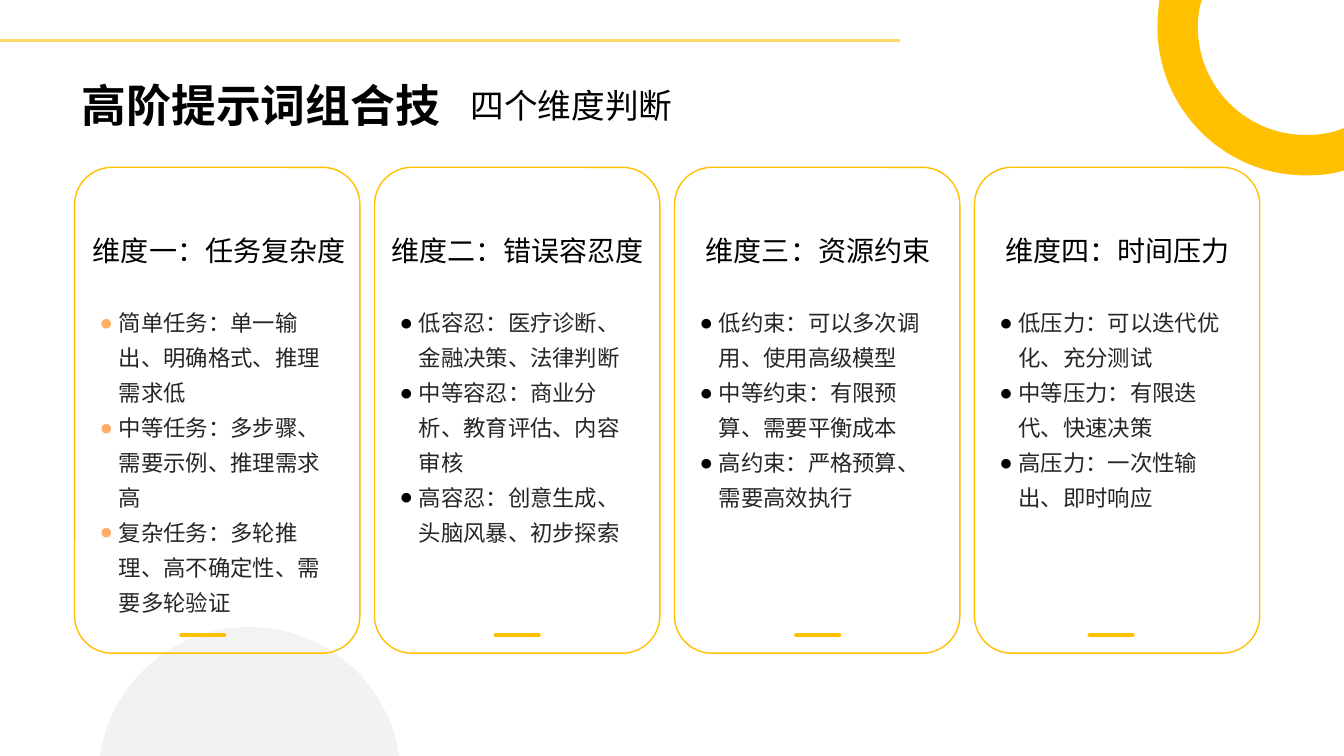
import lxml.etree
import pptx
import pptx.dml.color
import pptx.enum.shapes
import pptx.enum.text
import pptx.oxml
import pptx.oxml.ns
import pptx.util

Inches = pptx.util.Inches
Pt = pptx.util.Pt
qn = pptx.oxml.ns.qn
color = pptx.dml.color.RGBColor.from_string
HEADING_FONT = "Noto Sans CJK SC"

presentation = pptx.Presentation()
presentation.slide_width = Inches(13.33)
presentation.slide_height = Inches(7.5)
slide = presentation.slides.add_slide(presentation.slide_layouts[6])


def style_text(paragraph, size, font_name, hex_color):
    font = paragraph.font
    font.size = Pt(size)
    font.color.rgb = color(hex_color)
    font.name = font_name
    properties = paragraph._p.pPr.find(qn("a:defRPr"))
    lxml.etree.SubElement(properties, qn("a:ea"), typeface=font_name)


ring = [
    [(11.92, 0)],
    [(11.89, 0.09), (11.88, 0.18), (11.88, 0.27)],
    [(11.88, 0.86), (12.36, 1.34), (12.95, 1.34)],
    [(13.09, 1.34), (13.22, 1.32), (13.33, 1.27)],
    [(13.33, 1.69)],
    [(13.21, 1.73), (13.08, 1.74), (12.95, 1.74)],
    [(12.14, 1.74), (11.48, 1.08), (11.48, 0.27)],
    [(11.48, 0.18), (11.49, 0.09), (11.5, 0)],
]
disc = [
    [(3.96, 7.5)],
    [(0.99, 7.5)],
    [(1.1, 6.77), (1.72, 6.22), (2.47, 6.22)],
    [(3.23, 6.22), (3.85, 6.77), (3.96, 7.5)],
]
for segments, fill, alpha in [(ring, "FFC000", 100), (disc, "000000", 5)]:
    points = [(Inches(x), Inches(y)) for segment in segments for x, y in segment]
    builder = slide.shapes.build_freeform(*points[0])
    builder.add_line_segments(points[1:])
    shape = builder.convert_to_shape()
    outline = shape._element.spPr.find(".//" + qn("a:path"))
    lines = iter(outline.findall(qn("a:lnTo")))
    for segment in segments[1:]:
        pieces = [next(lines) for point in segment]
        if len(pieces) == 3:
            curve = lxml.etree.Element(qn("a:cubicBezTo"))
            pieces[0].addprevious(curve)
            for piece in pieces:
                curve.append(piece[0])
                outline.remove(piece)
    shape.shadow.inherit = False
    shape.fill.solid()
    shape.fill.fore_color.rgb = color(fill)
    shape.line.fill.background()
    if alpha < 100:
        fill_color = shape._element.spPr.find(qn("a:solidFill"))[0]
        lxml.etree.SubElement(fill_color, qn("a:alpha"), val=str(alpha * 1000))

title = slide.shapes.add_textbox(Inches(0.81), Inches(0.43), Inches(3.76), Inches(0.87))
frame = title.text_frame
frame.word_wrap = True
frame.vertical_anchor = pptx.enum.text.MSO_ANCHOR.BOTTOM
frame.margin_left = frame.margin_right = frame.margin_top = frame.margin_bottom = 0
frame.text = "高阶提示词组合技"
style_text(frame.paragraphs[0], 32, HEADING_FONT, "000000")
frame.paragraphs[0].font.bold = True

cards = [
    ("维度一：任务复杂度", "FFAF66", 0.76, 1.8, [
        "简单任务：单一输出、明确格式、推理需求低",
        "中等任务：多步骤、需要示例、推理需求高",
        "复杂任务：多轮推理、高不确定性、需要多轮验证"]),
    ("维度二：错误容忍度", "000000", 3.72, 4.92, [
        "低容忍：医疗诊断、金融决策、法律判断",
        "中等容忍：商业分析、教育评估、内容审核",
        "高容忍：创意生成、头脑风暴、初步探索"]),
    ("维度三：资源约束", "000000", 6.7, 7.9, [
        "低约束：可以多次调用、使用高级模型",
        "中等约束：有限预算、需要平衡成本",
        "高约束：严格预算、需要高效执行"]),
    ("维度四：时间压力", "000000", 9.67, 10.81, [
        "低压力：可以迭代优化、充分测试",
        "中等压力：有限迭代、快速决策",
        "高压力：一次性输出、即时响应"]),
]
lefts = [0.74 + 2.975 * index for index in range(len(cards))]
rules = [(0, 8.93, 0.4, "FFD966", 2.25)]
labels = [("四个维度判断", 4.57, 0.79, 6.67, 0.5, 24, pptx.enum.text.PP_ALIGN.LEFT)]

for height in (4.39, 4.82):
    for left, (heading, bullet_color, heading_left, dash_left, items) in zip(lefts, cards):
        card = slide.shapes.add_shape(
            pptx.enum.shapes.MSO_SHAPE.ROUNDED_RECTANGLE,
            Inches(left), Inches(1.66), Inches(2.83), Inches(height))
        card.adjustments[0] = 0.131
        card.shadow.inherit = False
        card.fill.solid()
        card.fill.fore_color.rgb = color("FFFFFF")
        if height == 4.39:
            card.line.fill.background()
            continue
        if left == lefts[-1]:
            card.fill.background()
        else:
            fill_color = card._element.spPr.find(qn("a:solidFill"))[0]
            lxml.etree.SubElement(fill_color, qn("a:alpha"), val="15000")
        card.line.color.rgb = color("FFC000")
        card.line.width = Pt(1)
        frame = card.text_frame
        frame.word_wrap = True
        frame.vertical_anchor = pptx.enum.text.MSO_ANCHOR.TOP
        frame.margin_left = frame.margin_right = Inches(0.14)
        frame.margin_top = Inches(1.22)
        frame.margin_bottom = Inches(0.05)
        frame.text = "\n".join(items)
        for paragraph in frame.paragraphs:
            paragraph.alignment = pptx.enum.text.PP_ALIGN.LEFT
            paragraph.line_spacing = 1.3
            properties = paragraph._p.get_or_add_pPr()
            properties.set("marL", str(Inches(0.19)))
            properties.set("indent", str(Inches(-0.19)))
            properties.set("hangingPunct", "0")
            bullet_fill = lxml.etree.SubElement(properties, qn("a:buClr"))
            lxml.etree.SubElement(bullet_fill, qn("a:srgbClr"), val=bullet_color)
            lxml.etree.SubElement(properties, qn("a:buFont"), typeface="Arial")
            lxml.etree.SubElement(properties, qn("a:buChar"), char="●")
            style_text(paragraph, 16, HEADING_FONT, "262626")
        rules.append((dash_left, dash_left + 0.42, 6.3, "FFC000", 3.5))
        labels.append((heading, heading_left, 2.27, 2.83, 0.37, 20, pptx.enum.text.PP_ALIGN.CENTER))

for text, left, top, width, height, size, alignment in labels:
    label = slide.shapes.add_textbox(Inches(left), Inches(top), Inches(width), Inches(height))
    label.text_frame.word_wrap = True
    label.text_frame.text = text
    paragraph = label.text_frame.paragraphs[0]
    paragraph.alignment = alignment
    style_text(paragraph, size, "Arial", "000000")

for start, end, top, line_color, width in rules:
    rule = slide.shapes.add_connector(
        pptx.enum.shapes.MSO_CONNECTOR.STRAIGHT,
        Inches(start), Inches(top), Inches(end), Inches(top))
    rule.line.color.rgb = color(line_color)
    rule.line.width = Pt(width)
    if top == 6.3:
        rule.line._get_or_add_ln().set("cap", "rnd")
    lxml.etree.SubElement(rule._element.spPr, qn("a:effectLst"))

presentation.save("out.pptx")
